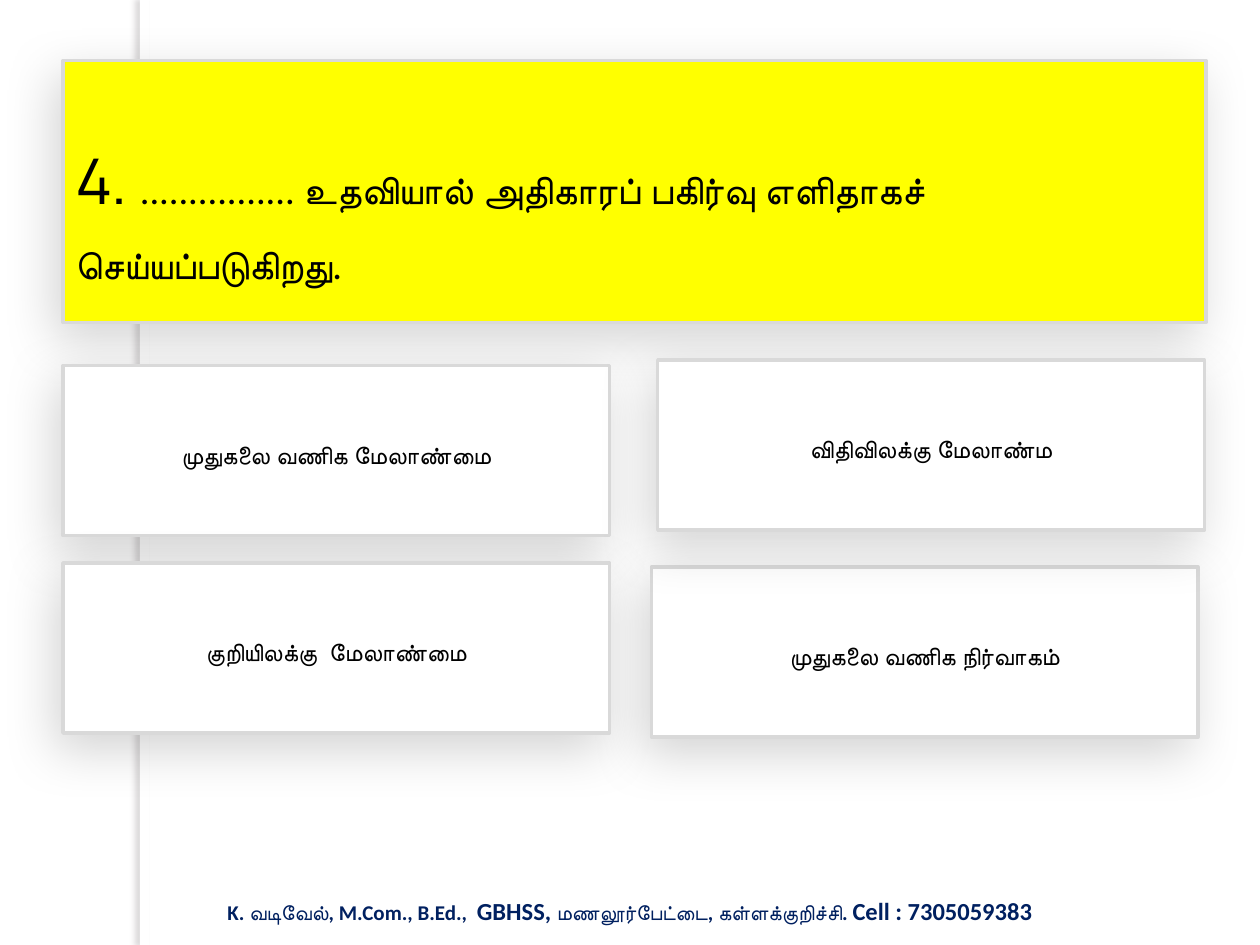
"""Builds a quiz slide with one question, four answer cards and a footer."""
from lxml import etree
from pptx import Presentation
from pptx.dml.color import RGBColor
from pptx.enum.shapes import MSO_SHAPE
from pptx.enum.text import MSO_ANCHOR, MSO_AUTO_SIZE, PP_ALIGN
from pptx.oxml.ns import qn
from pptx.util import Cm, Pt

RECTANGLE = MSO_SHAPE.RECTANGLE
MIDDLE = MSO_ANCHOR.MIDDLE
NO_FIT = MSO_AUTO_SIZE.NONE
LEFT, CENTER = PP_ALIGN.LEFT, PP_ALIGN.CENTER

WHITE = RGBColor(0xFF, 0xFF, 0xFF)
BLACK = RGBColor(0x00, 0x00, 0x00)
YELLOW = RGBColor(0xFF, 0xFF, 0x00)
GREY = RGBColor(0xD9, 0xD9, 0xD9)
TAUPE = RGBColor(0x7A, 0x72, 0x76)
NAVY = RGBColor(0x00, 0x20, 0x60)

PAGE_WIDTH, PAGE_HEIGHT = 25.4, 19.05
CARD_WIDTH, CARD_HEIGHT = 11.02, 3.43
ANSWERS = [
    (13.13, 11.43, "முதுகலை வணிக நிர்வாகம்"),
    (1.27, 7.37, "முதுகலை வணிக மேலாண்மை"),
    (1.27, 11.35, "குறியிலக்கு  மேலாண்மை"),
    (13.26, 7.26, "விதிவிலக்கு மேலாண்ம"),
]
QUESTION = [
    ("4. ", 36, "Manrope"),
    ("................ உதவியால் அதிகாரப் பகிர்வு எளிதாகச் செய்யப்படுகிறது.", 22, "Calibri"),
]
FOOTER = [
    ("K. வடிவேல், M.Com., B.Ed.,  ", 12, "Calibri"),
    ("GBHSS, ", 14, "Calibri"),
    ("மணலூர்பேட்டை, கள்ளக்குறிச்சி. ", 12, "Calibri"),
    ("Cell : 7305059383", 14, "Calibri"),
]


class QuizSlide:
    def __init__(self, page):
        self.page = page

    def add_shadow(self, box, color, opacity, blur, distance, angle):
        box.shadow.inherit = False
        effects = box._element.spPr.find(qn("a:effectLst"))
        outer = etree.SubElement(
            effects, qn("a:outerShdw"), blurRad=str(Pt(blur)), dist=str(Pt(distance)),
            dir=str(angle * 60000), algn="ctr", rotWithShape="0")
        tint = etree.SubElement(outer, qn("a:srgbClr"), val=str(color))
        etree.SubElement(tint, qn("a:alpha"), val=str(opacity * 1000))

    def add_spans(self, box, spans, align, color, bold=False):
        para = box.text_frame.paragraphs[0]
        para.alignment = align
        for text, size, face in spans:
            span = para.add_run()
            span.text = text
            span.font.size = Pt(size)
            span.font.name = face
            span.font.bold = bold
            span.font.color.rgb = color
        return para

    def frame(self, box, fill):
        box.fill.solid()
        box.fill.fore_color.rgb = fill
        box.line.color.rgb = GREY
        box.line.width = Pt(2)
        self.add_shadow(box, BLACK, 16, 30, 10, 118)
        text = box.text_frame
        text.word_wrap = True
        text.auto_size = NO_FIT
        text.vertical_anchor = MIDDLE
        text.margin_left = text.margin_right = text.margin_bottom = Cm(0.25)
        text.margin_top = Cm(0.41)

    def question(self, left, top, width, height, spans):
        title = self.page.shapes.title
        title.left, title.top = Cm(left), Cm(top)
        title.width, title.height = Cm(width), Cm(height)
        self.frame(title, YELLOW)
        self.add_spans(title, spans, LEFT, BLACK).line_spacing = 1.5

    def stripe(self, left, width):
        band = self.page.shapes.add_shape(
            RECTANGLE, Cm(left), 0, Cm(width), Cm(PAGE_HEIGHT))
        band.fill.solid()
        band.fill.fore_color.rgb = WHITE
        band.line.fill.background()
        self.add_shadow(band, TAUPE, 25, 3, 3, 180)
        self.page.shapes.title._element.addprevious(band._element)

    def answer(self, left, top, text):
        card = self.page.shapes.add_shape(
            RECTANGLE, Cm(left), Cm(top), Cm(CARD_WIDTH), Cm(CARD_HEIGHT))
        self.frame(card, WHITE)
        self.add_spans(card, [(text, 14, "Calibri")], CENTER, BLACK)

    def footer(self, top, height, spans):
        box = self.page.shapes.add_textbox(0, Cm(top), Cm(PAGE_WIDTH), Cm(height))
        box.text_frame.word_wrap = True
        self.add_spans(box, spans, CENTER, NAVY, bold=True)


def main():
    deck = Presentation()
    deck.slide_width, deck.slide_height = Cm(PAGE_WIDTH), Cm(PAGE_HEIGHT)
    quiz = QuizSlide(deck.slides.add_slide(deck.slide_layouts[5]))
    quiz.stripe(2.82, 0.2)
    quiz.question(1.27, 1.22, 23.04, 5.28, QUESTION)
    for left, top, text in ANSWERS:
        quiz.answer(left, top, text)
    quiz.footer(17.93, 0.86, FOOTER)
    deck.save("out.pptx")


if __name__ == "__main__":
    main()
